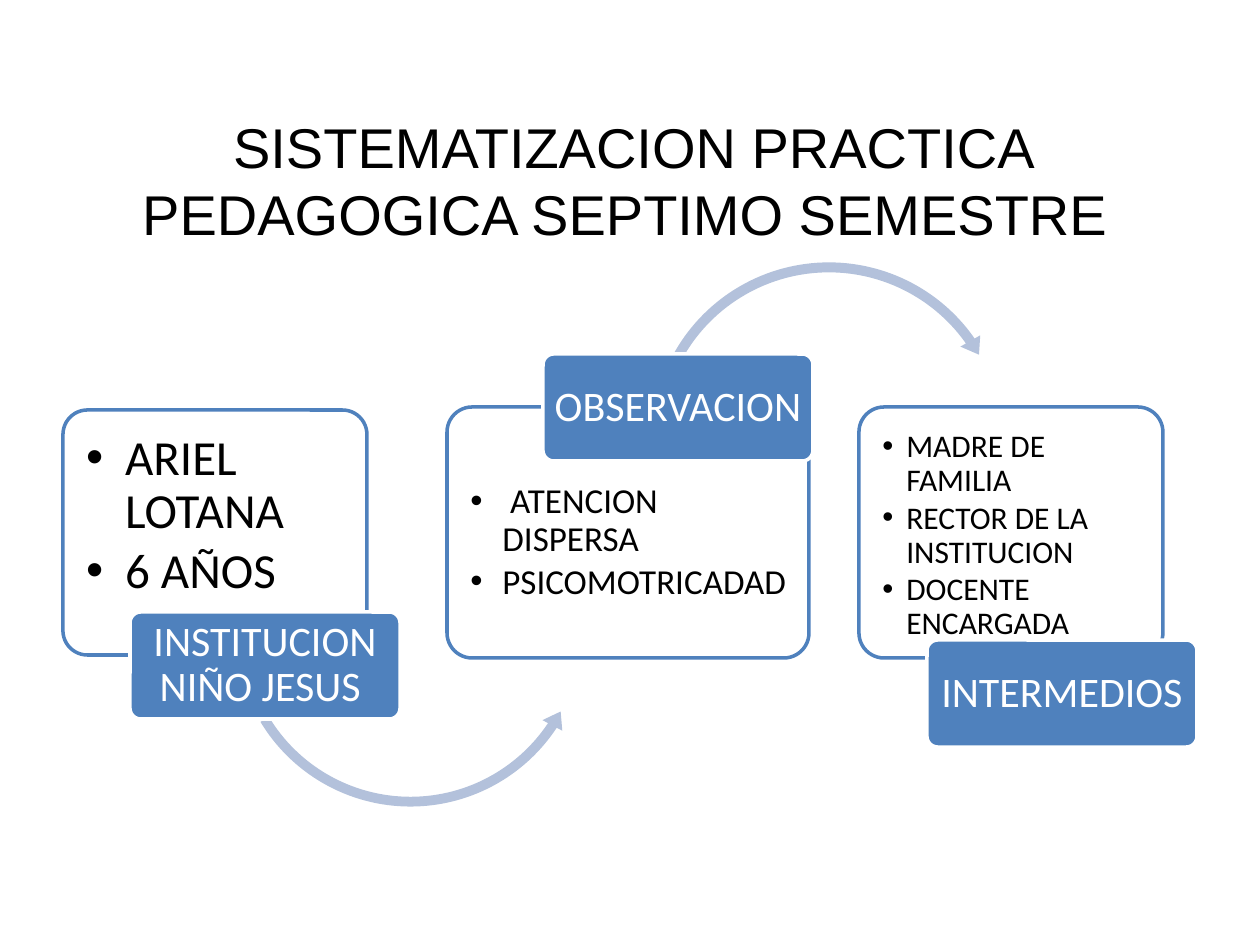
from lxml.etree import SubElement
from pptx import Presentation
from pptx.dml.color import RGBColor
from pptx.enum.shapes import MSO_SHAPE as Shape
from pptx.enum.text import MSO_ANCHOR as Anchor, PP_ALIGN as Align
from pptx.oxml.ns import qn
from pptx.util import Emu, Pt

BLACK = RGBColor(0, 0, 0)
WHITE = RGBColor(255, 255, 255)
BLUE = RGBColor(0x4F, 0x81, 0xBD)
PALE = RGBColor(0xB3, 0xC1, 0xDB)

TITLE = "SISTEMATIZACION PRACTICA PEDAGOGICA SEPTIMO SEMESTRE "

# Panel box, top inset, text size, hanging indent, items, tag corner, tag label
STAGES = [
    ((63, 410, 304, 245), 16, 28, 39, ["ARIEL LOTANA", "6 AÑOS"],
     (130, 612), "INSTITUCION NIÑO JESUS "),
    ((447, 407, 362, 251), 69, 20, 32, [" ATENCION DISPERSA", "PSICOMOTRICADAD"],
     (543, 354), "OBSERVACION"),
    ((859, 407, 304, 251), 16, 18, 24,
     ["MADRE DE FAMILIA", "RECTOR DE LA INSTITUCION", "DOCENTE ENCARGADA"],
     (927, 640), "INTERMEDIOS"),
]
TAG = (270, 107)

# The arrow that leaves each stage but the last
ARROWS = [
    (Shape.LEFT_CIRCULAR_ARROW, (229, 450, 363, 363),
     (0.027, 3.27, 20.11, 89.33, 0.031)),
    (Shape.CIRCULAR_ARROW, (645, 256, 368, 368),
     (0.027, 3.23, 195.01, 125.75, 0.031)),
]


def px(n):
    return Emu(round(n * 914400 / 126))


def add_bullet(para, indent):
    props = para._p.get_or_add_pPr()
    props.set("marL", str(px(indent)))
    props.set("indent", str(-px(indent)))
    SubElement(props, qn("a:buFont"), typeface="Arial")
    SubElement(props, qn("a:buChar"), char="•")


def write(shape, lines, size, font="Calibri", color=BLACK, align=Align.CENTER,
          anchor=Anchor.MIDDLE, insets=(4, 4, 4, 4), spacing=0.9, after=0,
          indent=0):
    """Fill a shape with paragraphs; an indent makes them bulleted."""
    frame = shape.text_frame
    frame.word_wrap = True
    frame.vertical_anchor = anchor
    (frame.margin_left, frame.margin_top,
     frame.margin_right, frame.margin_bottom) = map(px, insets)
    for i, line in enumerate(lines):
        para = frame.paragraphs[0] if i == 0 else frame.add_paragraph()
        para.alignment = align
        para.line_spacing = spacing
        para.space_after = Pt(after)
        if indent:
            add_bullet(para, indent)
        run = para.add_run()
        run.text = line
        run.font.size = Pt(size)
        run.font.name = font
        run.font.color.rgb = color


def add_form(slide, kind, box, adjust, fill, line=None):
    shape = slide.shapes.add_shape(kind, *map(px, box))
    shape.shadow.inherit = False
    for i, value in enumerate(adjust):
        shape.adjustments[i] = value
    shape.fill.solid()
    shape.fill.fore_color.rgb = fill
    if line is None:
        shape.line.fill.background()
    else:
        shape.line.color.rgb = line
        shape.line.width = Pt(2)
    return shape


def add_card(slide, box, fill, line):
    return add_form(slide, Shape.ROUNDED_RECTANGLE, box, [0.1], fill, line)


def add_panel(slide, box, top, size, indent, items):
    panel = add_card(slide, box, WHITE, BLUE)
    write(panel, items, size, align=Align.LEFT, anchor=Anchor.TOP,
          insets=(16, top, 4, 4), after=round(size * 0.13), indent=indent)


def add_tag(slide, corner, label):
    write(add_card(slide, corner + TAG, BLUE, WHITE), [label], 24, color=WHITE)


def main():
    deck = Presentation()
    deck.slide_width, deck.slide_height = px(1260), px(945)
    slide = deck.slides.add_slide(deck.slide_layouts[6])
    title = slide.shapes.add_textbox(*map(px, (66, 101, 1134, 157)))
    write(title, [TITLE], 32, font="Arial", insets=(13, 6, 13, 6), spacing=1.0)
    for i, (*panel, corner, label) in enumerate(STAGES):
        add_panel(slide, *panel)
        if i < len(ARROWS):
            add_form(slide, *ARROWS[i], PALE)
        add_tag(slide, corner, label)
    deck.save("out.pptx")


if __name__ == "__main__":
    main()
